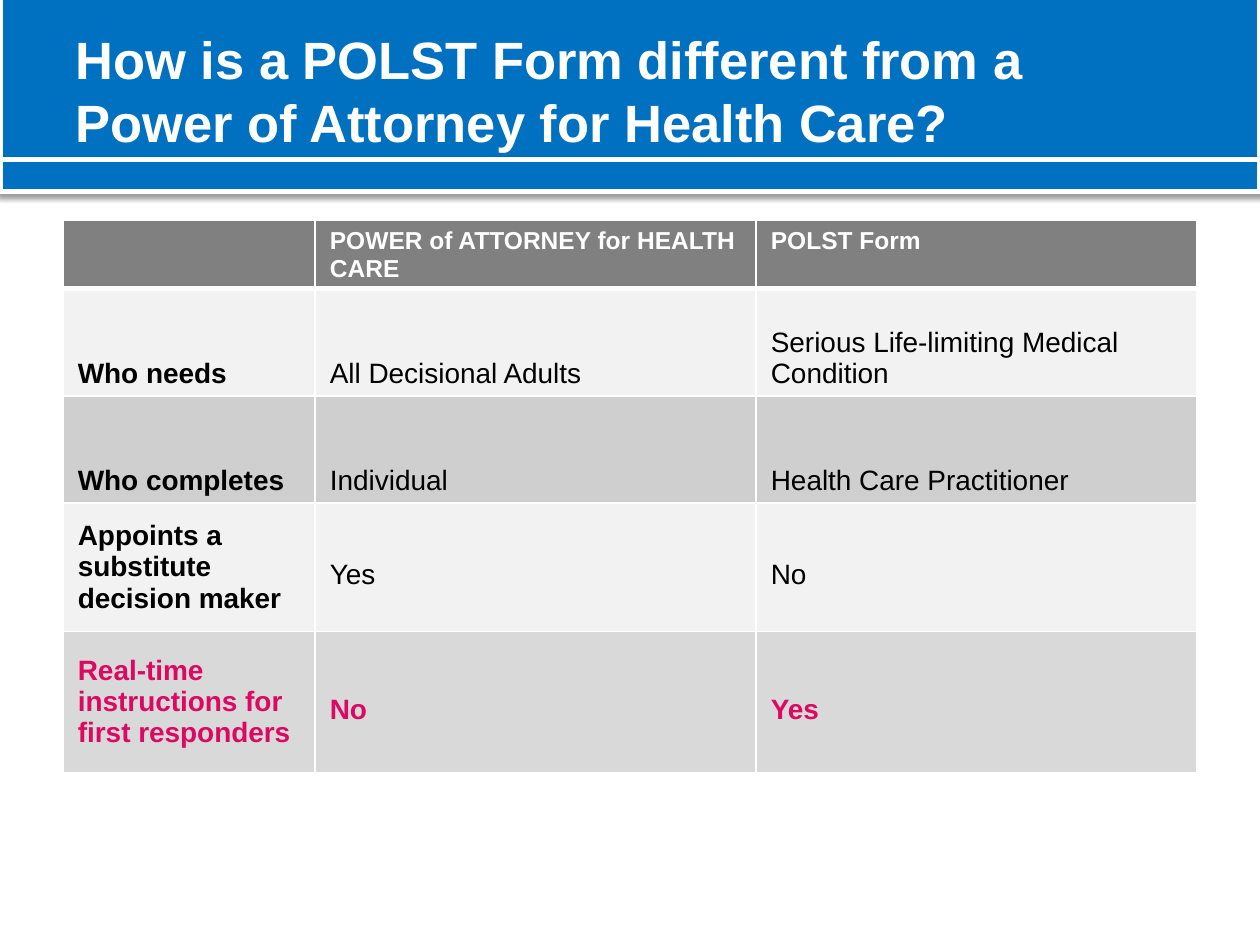
"""Build the slide comparing a POLST form with a power of attorney for health care."""
from dataclasses import dataclass

from lxml import etree
from pptx import Presentation
from pptx.dml.color import RGBColor
from pptx.enum import shapes, text
from pptx.oxml import parse_xml
from pptx.oxml.ns import nsdecls
from pptx.util import Cm, Pt


@dataclass(frozen=True)
class Theme:
    font: str = "Arial"
    blue: str = "0070C0"
    white: str = "FFFFFF"
    black: str = "000000"
    pink: str = "DB0962"
    header: str = "808080"
    light: str = "F2F2F2"
    medium: str = "CFCFCF"
    dark: str = "D9D9D9"
    title_size: int = 30
    header_size: int = 14
    body_size: int = 16
    rule: float = 1
    heavy_rule: float = 3


THEME = Theme()
TOP, MIDDLE, BOTTOM = (text.MSO_ANCHOR.TOP, text.MSO_ANCHOR.MIDDLE,
                       text.MSO_ANCHOR.BOTTOM)


@dataclass(frozen=True)
class Bar:
    top: float
    height: float


@dataclass(frozen=True)
class Row:
    cells: tuple[str, str, str]
    height: float
    fill: str
    anchor: text.MSO_ANCHOR
    color: str = THEME.black
    size: int = THEME.body_size
    bold_answers: bool = False
    answer_spacing: float = 1.0
    top_rule: float = THEME.rule
    bottom_rule: float = THEME.rule


BARS = (Bar(-0.13, 3.35), Bar(3.22, 0.64))
COLUMN_WIDTHS = (5.08, 8.89, 8.89)
ROWS = (
    Row(("", "POWER of ATTORNEY for HEALTH CARE", "POLST Form"), 1.24,
        THEME.header, TOP, THEME.white, THEME.header_size, True,
        bottom_rule=THEME.heavy_rule),
    Row(("Who needs", "All Decisional Adults",
         "Serious Life-limiting Medical Condition"), 2.16, THEME.light, BOTTOM,
        top_rule=THEME.heavy_rule),
    Row(("Who completes", "Individual", "Health Care Practitioner"), 2.16,
        THEME.medium, BOTTOM),
    Row(("Appoints a substitute decision maker", "Yes", "No"), 2.59,
        THEME.light, MIDDLE, answer_spacing=1.5),
    Row(("Real-time instructions for first responders", "No", "Yes"), 2.84,
        THEME.dark, MIDDLE, THEME.pink, bold_answers=True, answer_spacing=1.5),
)


def format_runs(tf, size: float, color: str, bold: bool) -> None:
    """Apply the theme font to every run of a text frame."""
    for p in tf.paragraphs:
        for r in p.runs:
            r.font.name = THEME.font
            r.font.size = Pt(size)
            r.font.bold = bold
            r.font.color.rgb = RGBColor.from_string(color)


def add_shadow(sp) -> None:
    """Give a shape a soft shadow falling straight down."""
    sp.shadow.inherit = False
    effects = sp._element.spPr.find(
        "{http://schemas.openxmlformats.org/drawingml/2006/main}effectLst")
    effects.append(parse_xml(
        f'<a:outerShdw {nsdecls("a")} blurRad="{Pt(3.1)}" dist="{Pt(1.6)}" '
        'dir="5400000" rotWithShape="0"><a:srgbClr val="000000">'
        '<a:alpha val="38000"/></a:srgbClr></a:outerShdw>'))


def add_bar(s, bar: Bar, width: int) -> None:
    """Draw one full-width banner bar."""
    sp = s.shapes.add_shape(shapes.MSO_SHAPE.RECTANGLE, 0, Cm(bar.top), width,
                            Cm(bar.height))
    sp.fill.solid()
    sp.fill.fore_color.rgb = RGBColor.from_string(THEME.blue)
    sp.line.color.rgb = RGBColor.from_string(THEME.white)
    sp.line.width = Pt(THEME.heavy_rule)
    add_shadow(sp)


def set_title(s, wording: str) -> None:
    """Fill the title placeholder and bring it in front of the banner."""
    sp = s.shapes.title
    sp.left, sp.top, sp.width, sp.height = Cm(1.27), Cm(0.23), Cm(22.86), Cm(3.18)
    tf = sp.text_frame
    tf.text = wording
    tf.word_wrap = True
    tf.auto_size = text.MSO_AUTO_SIZE.NONE
    tf.vertical_anchor = MIDDLE
    tf.paragraphs[0].alignment = text.PP_ALIGN.LEFT
    format_runs(tf, THEME.title_size, THEME.white, True)
    s.shapes._spTree.append(sp._element)


def set_borders(cell, row: Row) -> None:
    """Rule the four sides of a cell in white."""
    widths = {"L": THEME.rule, "R": THEME.rule, "T": row.top_rule,
              "B": row.bottom_rule}
    tc_pr = cell._tc.get_or_add_tcPr()
    for i, (side, width) in enumerate(widths.items()):
        tc_pr.insert(i, etree.fromstring(
            f'<a:ln{side} {nsdecls("a")} w="{Pt(width)}"><a:solidFill>'
            f'<a:srgbClr val="{THEME.white}"/></a:solidFill></a:ln{side}>'))


def fill_cell(cell, row: Row, column: int) -> None:
    """Write and format one table cell."""
    is_answer = column > 0
    cell.margin_left = cell.margin_right = Cm(0.3)
    cell.margin_top = cell.margin_bottom = Cm(0.13)
    cell.vertical_anchor = row.anchor
    cell.fill.solid()
    cell.fill.fore_color.rgb = RGBColor.from_string(row.fill)
    tf = cell.text_frame
    tf.text = row.cells[column]
    if is_answer:
        tf.paragraphs[0].line_spacing = row.answer_spacing
    format_runs(tf, row.size, row.color, row.bold_answers or not is_answer)
    set_borders(cell, row)


def add_comparison(s) -> None:
    """Add the comparison table."""
    table = s.shapes.add_table(
        len(ROWS), len(COLUMN_WIDTHS), Cm(1.27), Cm(4.45),
        Cm(sum(COLUMN_WIDTHS)), Cm(sum(row.height for row in ROWS))).table
    for column, width in zip(table.columns, COLUMN_WIDTHS):
        column.width = Cm(width)
    for i, row in enumerate(ROWS):
        table.rows[i].height = Cm(row.height)
        for j in range(len(COLUMN_WIDTHS)):
            fill_cell(table.cell(i, j), row, j)


def main() -> None:
    """Assemble and save the presentation."""
    prs = Presentation()
    prs.slide_width, prs.slide_height = Cm(25.4), Cm(19.05)
    s = prs.slides.add_slide(prs.slide_layouts.get_by_name("Title Only"))
    for bar in BARS:
        add_bar(s, bar, prs.slide_width)
    set_title(s, "How is a POLST Form different from a Power of Attorney "
                 "for Health Care?")
    add_comparison(s)
    prs.save("out.pptx")


if __name__ == "__main__":
    main()
